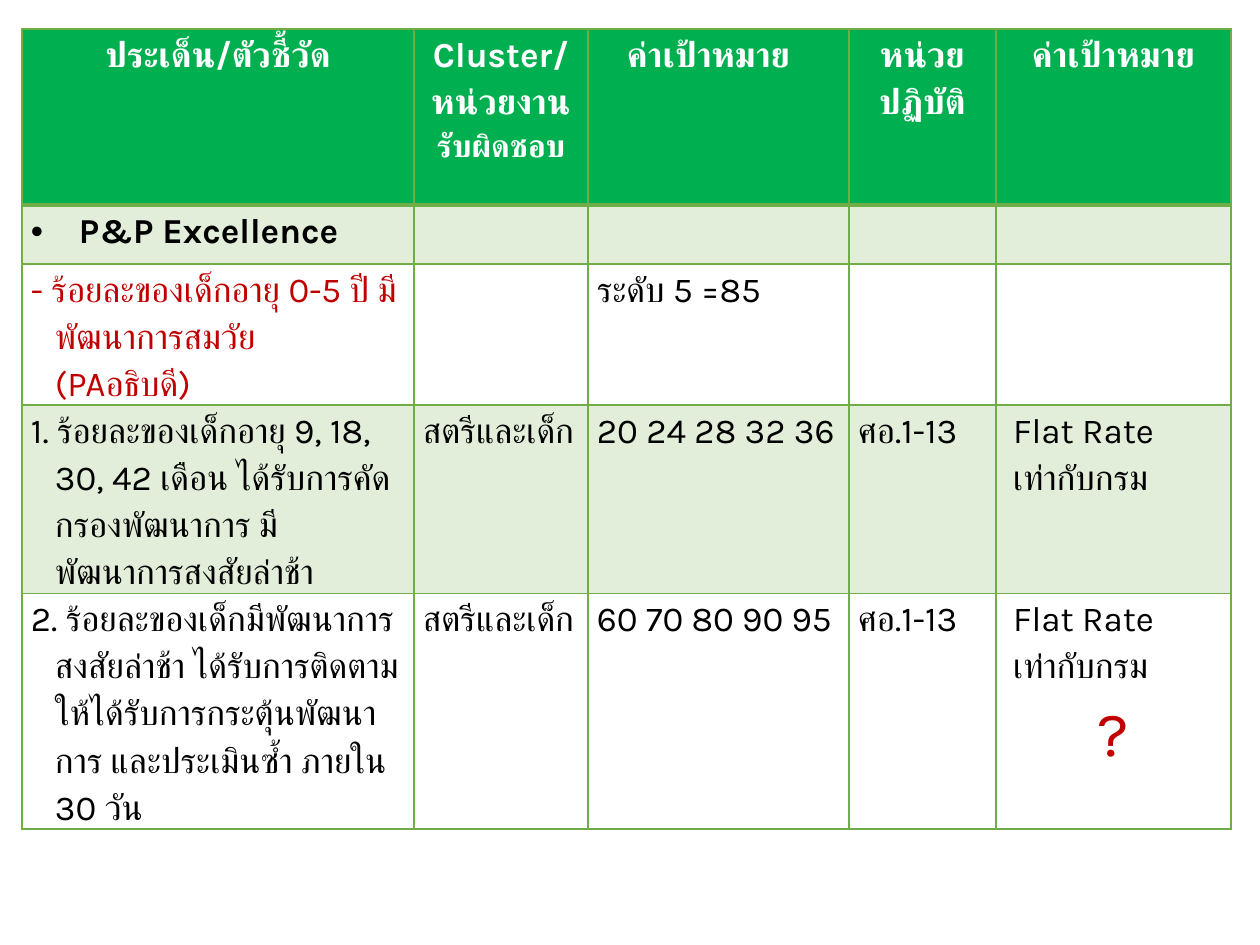
from lxml import etree
from pptx import Presentation
from pptx.dml.color import RGBColor
from pptx.enum.text import PP_ALIGN
from pptx.oxml.ns import qn
from pptx.util import Pt

LEFT, CENTER = PP_ALIGN.LEFT, PP_ALIGN.CENTER
FONT = "Karla"
GREEN, HEADER, RED, BLACK, WHITE = "70AD47", "00B050", "C00000", "000000", "FFFFFF"
PX = 914400 / 126

# Content: a cell is a list of paragraphs, a paragraph is (text, format)
HEADERS = ["ประเด็น/ตัวชี้วัด", "Cluster/หน่วยงาน", "ค่าเป้าหมาย", "หน่วยปฏิบัติ", "ค่าเป้าหมาย"]
HANGING = {"hang": 24}
FLAT_RATE = [(" Flat Rate", {}), (" เท่ากับกรม", {})]
ROWS = [
    [[("P&P Excellence", {"bold": True, "hang": 48, "bullet": "•"})], [], [], [], []],
    [[("- ร้อยละของเด็กอายุ 0-5 ปี มีพัฒนาการสมวัย  (PAอธิบดี)", {"color": RED, **HANGING})],
     [], [("ระดับ 5 =85", {})], [], []],
    [[("1. ร้อยละของเด็กอายุ 9, 18, 30, 42 เดือน ได้รับการคัดกรองพัฒนาการ มีพัฒนาการสงสัยล่าช้า", HANGING)],
     [("สตรีและเด็ก", {})], [("20 24 28 32 36", {})], [("ศอ.1-13", {})], FLAT_RATE],
    [[("2. ร้อยละของเด็กมีพัฒนาการสงสัยล่าช้า ได้รับการติดตามให้ได้รับการกระตุ้นพัฒนาการ"
       " และประเมินซ้ำ ภายใน 30 วัน", HANGING)],
     [("สตรีและเด็ก", {})], [("60 70 80 90 95", {})], [("ศอ.1-13", {})],
     FLAT_RATE + [("?", {"size": 36, "color": RED, "align": CENTER})]],
]
LEFT_EDGE, TOP_EDGE = 22, 29
COLUMN_WIDTHS = [392, 174, 261, 147, 235]
ROW_HEIGHTS = [176, 59, 117, 176, 234]
PADDING = 9


def px(n):
    return round(n * PX)


def rgb(value):
    return RGBColor.from_string(value)


def add_run(p, text, size=20, color=BLACK, bold=False):
    r = p.add_run()
    r.text = text
    r.font.size, r.font.bold, r.font.name = Pt(size), bold, FONT
    r.font.color.rgb = rgb(color)
    etree.SubElement(r._r.get_or_add_rPr(), qn("a:cs"), typeface=FONT)


def write(p, text, align=LEFT, hang=0, bullet=None, **font):
    p.alignment, p.line_spacing = align, 1.15
    pPr = p._p.get_or_add_pPr()
    if hang:
        pPr.set("marL", str(px(hang)))
        pPr.set("indent", str(-px(hang)))
    if bullet:
        etree.SubElement(pPr, qn("a:buFont"), typeface="Arial")
        etree.SubElement(pPr, qn("a:buChar"), char=bullet)
    add_run(p, text, **font)


def fill_cell(cell, color=None, alpha=None):
    if color is None:
        cell.fill.background()
        return
    cell.fill.solid()
    cell.fill.fore_color.rgb = rgb(color)
    if alpha:
        clr = cell._tc.tcPr.find(".//" + qn("a:srgbClr"))
        etree.SubElement(clr, qn("a:alpha"), val=str(alpha * 1000))


def border_cell(cell, bottom=1):
    tcPr = cell._tc.get_or_add_tcPr()
    widths = {"a:lnL": 1, "a:lnR": 1, "a:lnT": 1, "a:lnB": bottom}
    for i, (tag, width) in enumerate(widths.items()):
        ln = etree.Element(qn(tag), w=str(Pt(width)))
        solid = etree.SubElement(ln, qn("a:solidFill"))
        etree.SubElement(solid, qn("a:srgbClr"), val=GREEN)
        tcPr.insert(i, ln)


def pad_cell(cell):
    cell.margin_left = cell.margin_right = px(PADDING)
    cell.margin_top = cell.margin_bottom = 0


prs = Presentation()
prs.slide_width, prs.slide_height = px(1260), px(945)
s = prs.slides.add_slide(prs.slide_layouts[6])

# Table grid
table = s.shapes.add_table(
    len(ROW_HEIGHTS), len(COLUMN_WIDTHS), px(LEFT_EDGE), px(TOP_EDGE),
    px(sum(COLUMN_WIDTHS)), px(sum(ROW_HEIGHTS))).table
for column, width in zip(table.columns, COLUMN_WIDTHS):
    column.width = px(width)
for row, height in zip(table.rows, ROW_HEIGHTS):
    row.height = px(height)

# Header row
for c, text in enumerate(HEADERS):
    cell = table.cell(0, c)
    pad_cell(cell)
    fill_cell(cell, HEADER)
    border_cell(cell, bottom=2)
    write(cell.text_frame.paragraphs[0], text, align=CENTER, color=WHITE, bold=True)
add_run(table.cell(0, 1).text_frame.paragraphs[0], "รับผิดชอบ", size=18, color=WHITE, bold=True)
table.cell(0, 2).margin_right = px(PADDING + 20)

# Indicator rows, every other one tinted
for r, row in enumerate(ROWS, start=1):
    for c, paragraphs in enumerate(row):
        cell = table.cell(r, c)
        pad_cell(cell)
        if r % 2:
            fill_cell(cell, GREEN, alpha=20)
        else:
            fill_cell(cell)
        border_cell(cell)
        tf = cell.text_frame
        for i, (text, style) in enumerate(paragraphs):
            write(tf.add_paragraph() if i else tf.paragraphs[0], text, **style)

prs.save("out.pptx")
